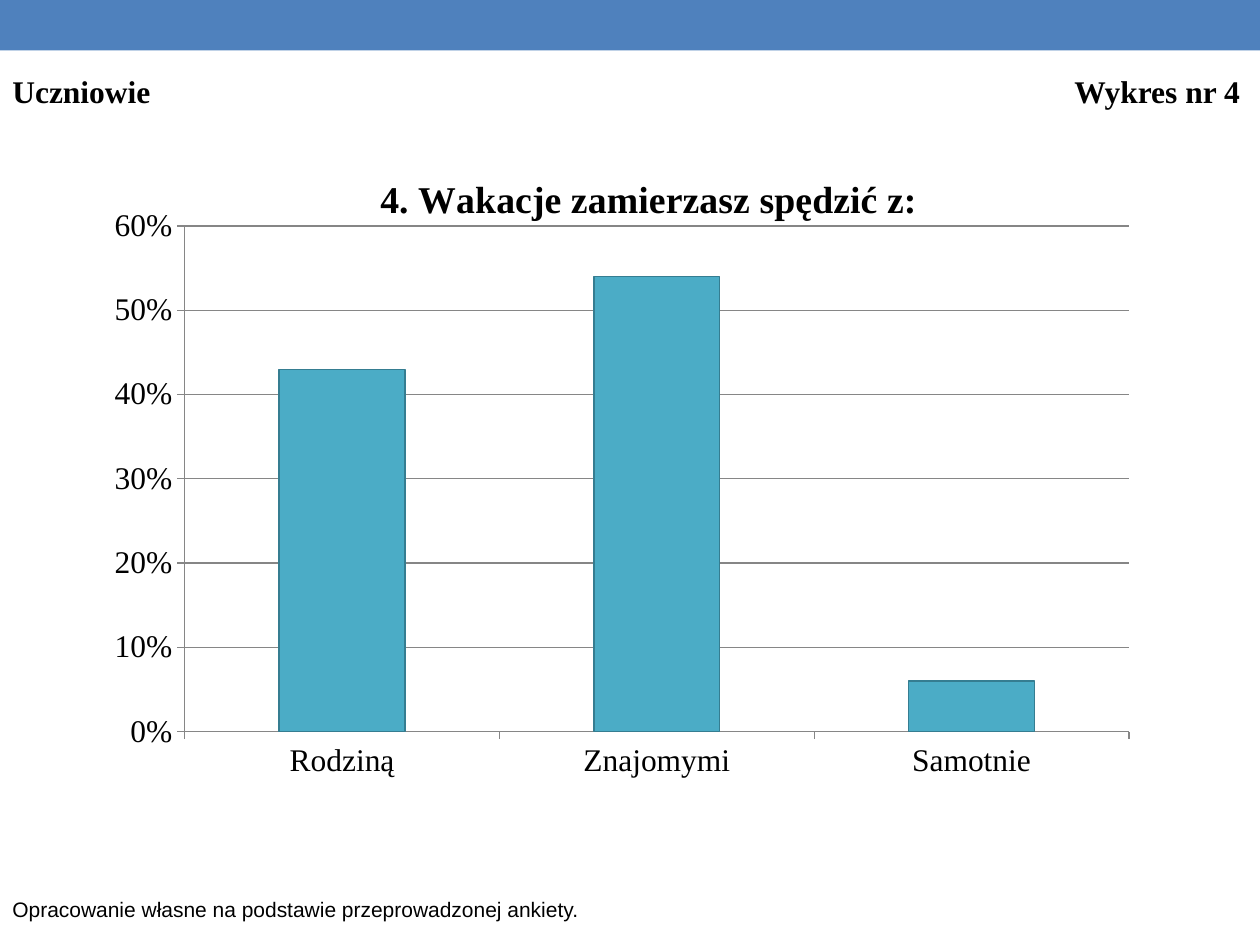
from lxml.etree import SubElement
from pptx import Presentation
from pptx.chart.data import CategoryChartData
from pptx.dml.color import RGBColor
from pptx.enum.chart import XL_CHART_TYPE as ChartType, XL_TICK_MARK as TickMark
from pptx.enum.shapes import MSO_SHAPE as Shape
from pptx.oxml import parse_xml
from pptx.oxml.ns import nsdecls, qn
from pptx.util import Pt

BLACK = RGBColor(0, 0, 0)
WHITE = RGBColor(255, 255, 255)
BAND_BLUE = RGBColor(0x4F, 0x81, 0xBD)
BAR_TEAL = RGBColor(0x4B, 0xAC, 0xC6)
BAR_EDGE = RGBColor(0x35, 0x7D, 0x91)
AXIS_GREY = RGBColor(0x86, 0x86, 0x86)

SERIF = "Times New Roman"
HEADING_FONT = {"name": SERIF, "size": Pt(18), "bold": True}
SOURCE_FONT = {"name": "Arial", "size": Pt(12), "bold": False}
AXIS_FONT = {"name": SERIF, "size": Pt(18), "bold": False}
TITLE_FONT = {"name": SERIF, "size": Pt(21.6), "bold": True}


def format_font(font, values):
    for name, value in values.items():
        setattr(font, name, value)
    font.color.rgb = BLACK


def add_band(slide, width, height):
    band = slide.shapes.add_shape(Shape.RECTANGLE, 0, 0, width, height)
    band.shadow.inherit = False
    band.fill.solid()
    band.fill.fore_color.rgb = BAND_BLUE
    band.line.fill.background()


def add_text(slide, text, box, font_values, right_tab=None):
    frame = slide.shapes.add_textbox(*map(Pt, box)).text_frame
    frame.word_wrap = True
    paragraph = frame.paragraphs[0]
    if right_tab:
        tabs = SubElement(paragraph._p.get_or_add_pPr(), qn("a:tabLst"))
        SubElement(tabs, qn("a:tab"), pos=str(Pt(right_tab)), algn="r")
    run = paragraph.add_run()
    run.text = text
    format_font(run.font, font_values)


def set_layout(element, index, **settings):
    """Place a chart part by fractions of the chart's size."""
    for old_layout in element.findall(qn("c:layout")):
        element.remove(old_layout)
    layout = parse_xml(f"<c:layout {nsdecls('c')}><c:manualLayout/></c:layout>")
    for name, value in settings.items():
        SubElement(layout[0], qn(f"c:{name}"), val=str(value))
    element.insert(index, layout)


def set_line(line, color, width=0.75):
    line.color.rgb = color
    line.width = Pt(width)


def format_axis(axis):
    format_font(axis.tick_labels.font, AXIS_FONT)
    set_line(axis.format.line, AXIS_GREY)
    axis.major_tick_mark = TickMark.OUTSIDE
    axis.minor_tick_mark = TickMark.NONE


def add_column_chart(slide, title, shares, box):
    data = CategoryChartData(number_format="0%")
    data.categories = shares.keys()
    data.add_series("Series 1", shares.values())
    chart = slide.shapes.add_chart(ChartType.COLUMN_CLUSTERED, *map(Pt, box), data).chart
    chart.has_legend = False
    format_font(chart.font, {"name": "Arial", "size": Pt(18)})

    chart.has_title = True
    paragraph = chart.chart_title.text_frame.paragraphs[0]
    run = paragraph.add_run()
    run.text = title
    format_font(run.font, TITLE_FONT)
    set_layout(chart.chart_title._element, 1, xMode="edge", yMode="edge", x=0.25, y=0.02)
    set_layout(chart._chartSpace.chart.plotArea, 0, layoutTarget="inner",
               xMode="edge", yMode="edge", x=0.067, y=0.112, w=0.916, h=0.796)

    for axis in (chart.category_axis, chart.value_axis):
        format_axis(axis)
    values = chart.value_axis
    scale = {"minimum_scale": 0, "maximum_scale": 0.6, "major_unit": 0.1}
    for name, value in scale.items():
        setattr(values, name, value)
    values.tick_labels.number_format = "0%"
    values.tick_labels.number_format_is_linked = False
    set_line(values.major_gridlines.format.line, AXIS_GREY)

    plot = chart.plots[0]
    plot.gap_width = 150
    plot.vary_by_categories = False
    bars = plot.series[0].format
    bars.fill.solid()
    bars.fill.fore_color.rgb = BAR_TEAL
    set_line(bars.line, BAR_EDGE)


def main():
    presentation = Presentation()
    presentation.slide_width, presentation.slide_height = Pt(720), Pt(540)
    slide = presentation.slides.add_slide(presentation.slide_layouts[6])
    slide.background.fill.solid()
    slide.background.fill.fore_color.rgb = WHITE

    add_band(slide, presentation.slide_width, Pt(28.8))
    add_column_chart(slide, "4. Wakacje zamierzasz spędzić z:",
                     {"Rodziną": 0.43, "Znajomymi": 0.54, "Samotnie": 0.06},
                     (65.5, 88.5, 589.7, 363))
    add_text(slide, "Opracowanie własne na podstawie przeprowadzonej ankiety.",
             (0, 508.5, 374.4, 21.6), SOURCE_FONT)
    add_text(slide, "Uczniowie\tWykres nr 4", (0, 37.5, 720, 28.8), HEADING_FONT,
             right_tab=701.5)
    presentation.save("out.pptx")


if __name__ == "__main__":
    main()
